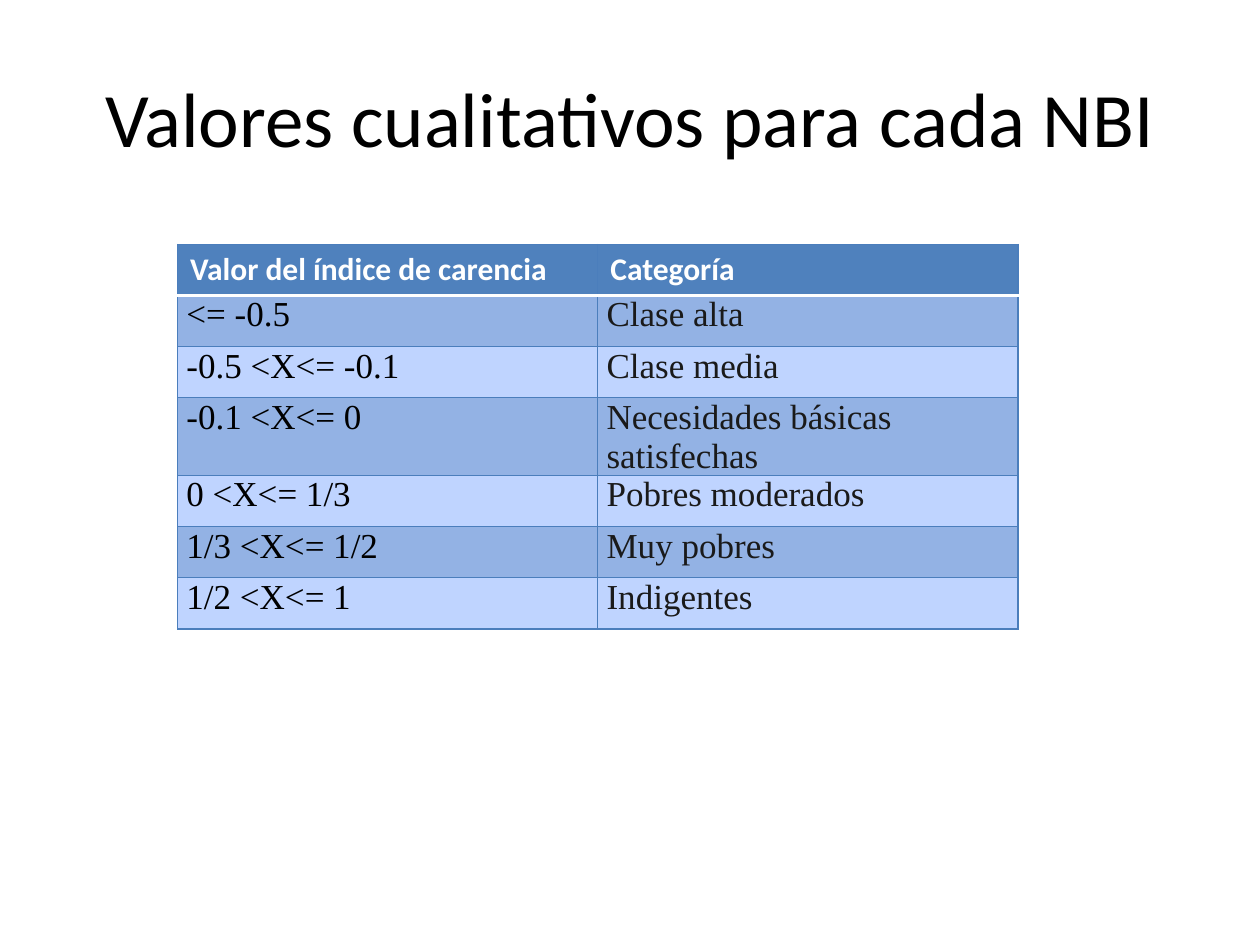
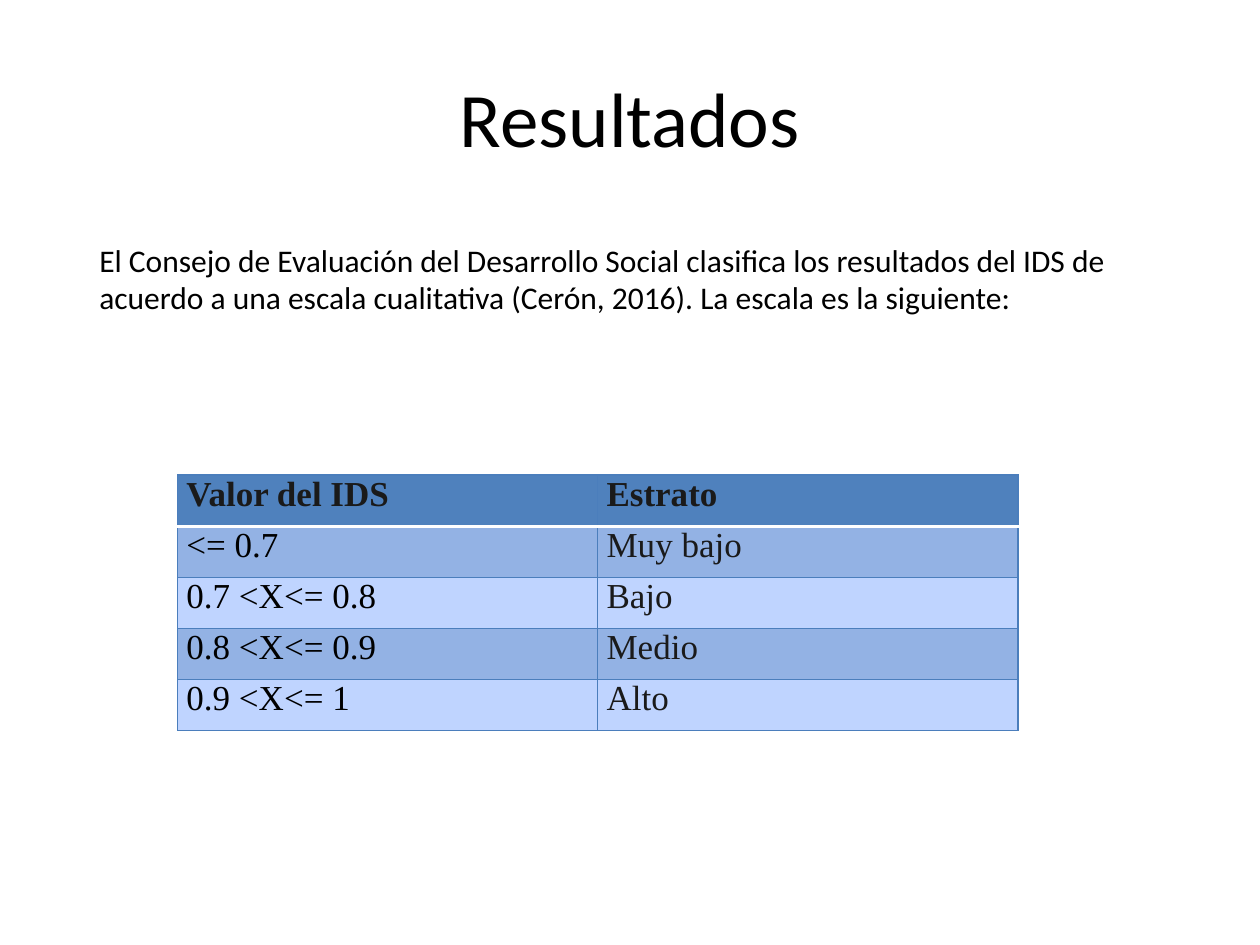
"""Build two slides that classify NBI and IDS values in tables."""
from lxml import etree
from pptx import Presentation
from pptx.dml.color import RGBColor
from pptx.enum.text import MSO_ANCHOR, PP_ALIGN
from pptx.oxml.ns import qn
from pptx.util import Inches, Pt

CENTER = PP_ALIGN.CENTER
MIDDLE = MSO_ANCHOR.MIDDLE
TITLE_ONLY = 5
SANS = "Calibri"
SERIF = "Times New Roman"
COLORS = {
    "black": "000000",
    "ink": "1A1A1A",
    "white": "FFFFFF",
    "header": "4F81BD",
    "band": "93B2E4",
    "plain": "BFD4FF",
    "border": "4B7EBC",
}
TABLE_LEFT, TABLE_WIDTH, ROW_HEIGHT = 1.41, 6.67, 0.406

NBI_ROWS = [
    ("Valor del índice de carencia", "Categoría"),
    ("<= -0.5", "Clase alta"),
    ("-0.5 <X<= -0.1", "Clase media"),
    ("-0.1 <X<= 0", "Necesidades básicas satisfechas"),
    ("0 <X<= 1/3", "Pobres moderados"),
    ("1/3 <X<= 1/2", "Muy pobres"),
    ("1/2 <X<= 1", "Indigentes"),
]
IDS_ROWS = [
    ("Valor del IDS", "Estrato"),
    ("<= 0.7", "Muy bajo"),
    ("0.7 <X<= 0.8", "Bajo"),
    ("0.8 <X<= 0.9", "Medio"),
    ("0.9 <X<= 1", "Alto"),
]
IDS_INTRO = (
    "El Consejo de Evaluación del Desarrollo Social clasifica los resultados "
    "del IDS de acuerdo a una escala cualitativa (Cerón, 2016). "
    "La escala es la siguiente:"
)


def rgb(name):
    """Return the named colour."""
    return RGBColor.from_string(COLORS[name])


def write(tf, text, font, size, color, bold=False):
    """Set the text of a frame and format its runs."""
    tf.text = text
    for p in tf.paragraphs:
        for r in p.runs:
            r.font.name = font
            r.font.size = Pt(size)
            r.font.bold = bold
            r.font.color.rgb = rgb(color)


def add_titled_slide(prs, title):
    """Add a slide with a centred title."""
    s = prs.slides.add_slide(prs.slide_layouts[TITLE_ONLY])
    sp = s.shapes.title
    sp.left, sp.top = Inches(0.5), Inches(0.3)
    sp.width, sp.height = Inches(9), Inches(1.25)
    tf = sp.text_frame
    write(tf, title, SANS, 44, "black")
    tf.vertical_anchor = MIDDLE
    tf.paragraphs[0].alignment = CENTER
    return s


def add_paragraph_box(s, text, left, top, width, height):
    """Add a wrapped block of running text."""
    sp = s.shapes.add_textbox(Inches(left), Inches(top), Inches(width), Inches(height))
    tf = sp.text_frame
    tf.word_wrap = True
    write(tf, text, SANS, 18, "black")


def add_border(cell, side, color, width):
    """Draw one border of a cell."""
    ln = etree.SubElement(cell._tc.get_or_add_tcPr(), qn(f"a:ln{side}"), w=str(Pt(width)))
    fill = etree.SubElement(ln, qn("a:solidFill"))
    etree.SubElement(fill, qn("a:srgbClr"), val=COLORS[color])


def style_cell(cell, row):
    """Give a cell its borders and its band colour."""
    thin, divider = ("border", 0.75), ("white", 2)
    add_border(cell, "L", *thin)
    add_border(cell, "R", *thin)
    add_border(cell, "T", *(divider if row == 1 else thin))
    add_border(cell, "B", *(divider if row == 0 else thin))
    cell.fill.solid()
    cell.fill.fore_color.rgb = rgb("header" if row == 0 else "band" if row % 2 else "plain")


def set_tight_margins(cell):
    """Remove the vertical margins of a cell and narrow the others."""
    cell.margin_left = cell.margin_right = Inches(0.07)
    cell.margin_top = cell.margin_bottom = 0


def add_scale_table(s, rows, top, sans_header=False):
    """Add a two-column table of value ranges and their categories."""
    table = s.shapes.add_table(
        len(rows), 2, Inches(TABLE_LEFT), Inches(top),
        Inches(TABLE_WIDTH), Inches(ROW_HEIGHT * len(rows)),
    ).table
    for i, row in enumerate(rows):
        for j, text in enumerate(row):
            cell = table.cell(i, j)
            style_cell(cell, i)
            if i == 0 and sans_header:
                write(cell.text_frame, text, SANS, 18, "white", bold=True)
                continue
            set_tight_margins(cell)
            color = "black" if i and j == 0 else "ink"
            write(cell.text_frame, text, SERIF, 20, color, bold=i == 0)


def main():
    """Build and save the presentation."""
    prs = Presentation()
    prs.slide_width, prs.slide_height = Inches(10), Inches(7.5)

    s = add_titled_slide(prs, "Valores cualitativos para cada NBI")
    add_scale_table(s, NBI_ROWS, 1.94, sans_header=True)

    s = add_titled_slide(prs, "Resultados")
    add_paragraph_box(s, IDS_INTRO, 0.69, 1.86, 8.54, 0.71)
    add_scale_table(s, IDS_ROWS, 3.77)

    prs.save("out.pptx")


if __name__ == "__main__":
    main()
